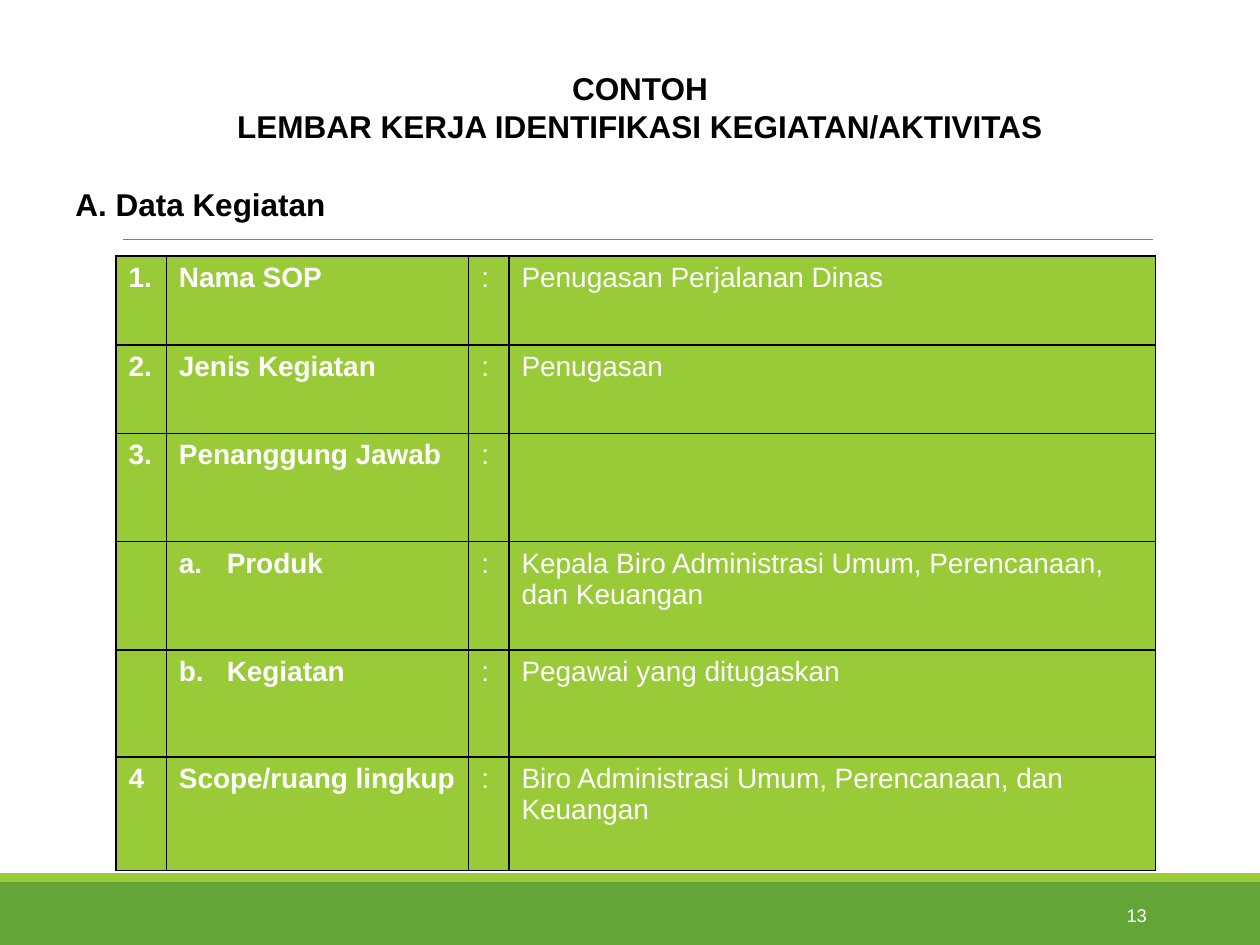
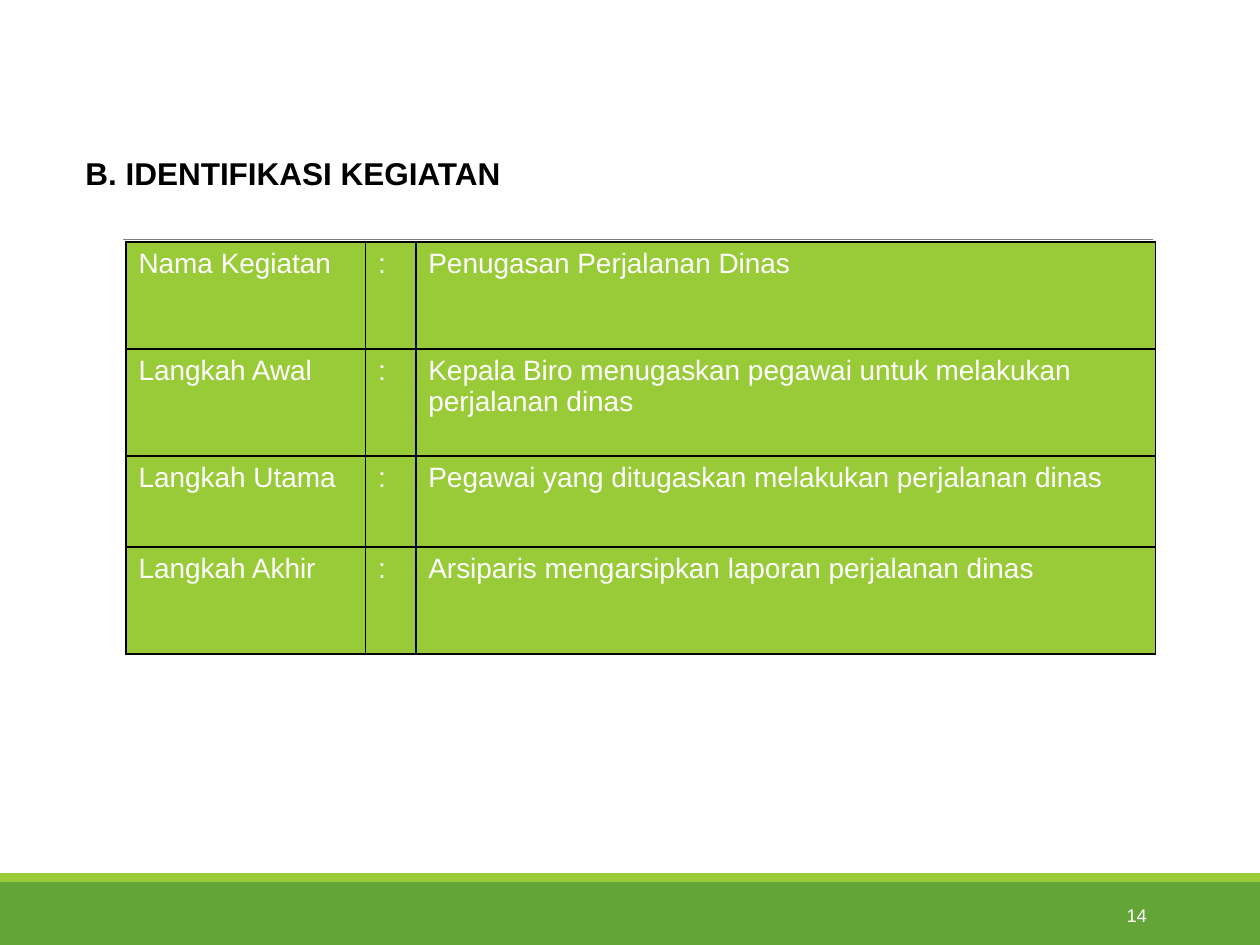
from dataclasses import dataclass

from lxml import etree
from pptx import Presentation
from pptx.dml.color import RGBColor
from pptx.enum import shapes, text
from pptx.oxml import ns
from pptx.util import Inches, Pt

GREEN = RGBColor(0x63, 0xA5, 0x37)
LIME = RGBColor(0x99, 0xCB, 0x38)
GRAY = RGBColor(0x80, 0x80, 0x80)
BLACK = RGBColor(0, 0, 0)
WHITE = RGBColor(0xFF, 0xFF, 0xFF)
FONT = "Arial"
LEFT, CENTER, RIGHT = text.PP_ALIGN.LEFT, text.PP_ALIGN.CENTER, text.PP_ALIGN.RIGHT


@dataclass(frozen=True)
class Band:
    top: float
    height: float
    color: RGBColor


@dataclass(frozen=True)
class Label:
    words: str
    left: float
    top: float
    width: float
    height: float = 0.4
    size: float = 18
    color: RGBColor = BLACK
    bold: bool = True
    align: text.PP_ALIGN = LEFT
    wrap: bool = False


@dataclass(frozen=True)
class Grid:
    left: float
    top: float
    columns: tuple[float, ...]
    heights: tuple[float, ...]
    rows: tuple[tuple[str, ...], ...]
    bold_columns: int = 0
    lettered_rows: tuple[int, ...] = ()


@dataclass(frozen=True)
class Page:
    number: int
    labels: tuple[Label, ...]
    grid: Grid


BANDS = (Band(7, 0.5, GREEN), Band(6.93, 0.07, LIME))

PAGES = (
    Page(
        13,
        (
            Label("CONTOH\nLEMBAR KERJA IDENTIFIKASI KEGIATAN/AKTIVITAS",
                  1.75, 0.5, 6.66, 0.7, align=CENTER),
            Label("A. Data Kegiatan", 0.5, 1.42, 2.83, wrap=True),
        ),
        Grid(
            0.92, 2.03, (0.4, 2.4, 0.32, 5.13), (0.71, 0.7, 0.86, 0.86, 0.85, 0.9),
            (
                ("1.", "Nama SOP", ":", "Penugasan Perjalanan Dinas"),
                ("2.", "Jenis Kegiatan", ":", "Penugasan"),
                ("3.", "Penanggung Jawab", ":", ""),
                ("", "Produk", ":", "Kepala Biro Administrasi Umum, Perencanaan, dan Keuangan"),
                ("", "Kegiatan", ":", "Pegawai yang ditugaskan"),
                ("4", "Scope/ruang lingkup", ":",
                 "Biro Administrasi Umum, Perencanaan, dan Keuangan"),
            ),
            bold_columns=2,
            lettered_rows=(3, 4),
        ),
    ),
    Page(
        14,
        (Label("B. IDENTIFIKASI KEGIATAN", 0.58, 1.17, 3.53),),
        Grid(
            1, 1.92, (1.9, 0.4, 5.87), (0.85, 0.85, 0.72, 0.85),
            (
                ("Nama Kegiatan", ":", "Penugasan Perjalanan Dinas"),
                ("Langkah Awal", ":",
                 "Kepala Biro menugaskan pegawai untuk melakukan perjalanan dinas"),
                ("Langkah Utama", ":", "Pegawai yang ditugaskan melakukan perjalanan dinas"),
                ("Langkah Akhir", ":", "Arsiparis mengarsipkan laporan perjalanan dinas"),
            ),
        ),
    ),
)


def style_text(frame, size: float, color: RGBColor, bold: bool, align=LEFT) -> None:
    for para in frame.paragraphs:
        para.alignment = align
        for span in para.runs:
            span.font.name = FONT
            span.font.size = Pt(size)
            span.font.bold = bold
            span.font.color.rgb = color


def add_label(slide, label: Label) -> None:
    box = slide.shapes.add_textbox(
        Inches(label.left), Inches(label.top), Inches(label.width), Inches(label.height))
    frame = box.text_frame
    frame.text = label.words
    frame.word_wrap = label.wrap
    frame.vertical_anchor = text.MSO_ANCHOR.MIDDLE
    style_text(frame, label.size, label.color, label.bold, label.align)


def add_band(slide, band: Band) -> None:
    bar = slide.shapes.add_shape(
        shapes.MSO_SHAPE.RECTANGLE, 0, Inches(band.top), Inches(10), Inches(band.height))
    bar.shadow.inherit = False
    bar.fill.solid()
    bar.fill.fore_color.rgb = band.color
    bar.line.fill.background()


def add_rule(slide) -> None:
    rule = slide.shapes.add_connector(
        shapes.MSO_CONNECTOR.STRAIGHT, Inches(0.98), Inches(1.9), Inches(9.15), Inches(1.9))
    rule.line.color.rgb = GRAY
    rule.line.width = Pt(0.5)
    etree.SubElement(rule._element.spPr, ns.qn("a:effectLst"))


def add_borders(cell) -> None:
    properties = cell._tc.get_or_add_tcPr()
    for index, side in enumerate(("lnL", "lnR", "lnT", "lnB")):
        border = etree.Element(ns.qn(f"a:{side}"), w=str(Pt(1)))
        fill = etree.SubElement(border, ns.qn("a:solidFill"))
        etree.SubElement(fill, ns.qn("a:srgbClr"), val=str(BLACK))
        properties.insert(index, border)


def add_letter(para, position: int) -> None:
    properties = para._p.get_or_add_pPr()
    properties.set("marL", str(Inches(0.38)))
    properties.set("indent", str(-Inches(0.38)))
    etree.SubElement(properties, ns.qn("a:buFont"), typeface=FONT)
    etree.SubElement(properties, ns.qn("a:buAutoNum"),
                     type="alphaLcPeriod", startAt=str(position))


def add_grid(slide, grid: Grid) -> None:
    table = slide.shapes.add_table(
        len(grid.rows), len(grid.columns), Inches(grid.left), Inches(grid.top),
        Inches(sum(grid.columns)), Inches(sum(grid.heights))).table
    table.first_row = table.horz_banding = False
    for column, width in zip(table.columns, grid.columns):
        column.width = Inches(width)
    for row, height in zip(table.rows, grid.heights):
        row.height = Inches(height)
    for row_index, row in enumerate(grid.rows):
        for column_index, words in enumerate(row):
            cell = table.cell(row_index, column_index)
            cell.fill.solid()
            cell.fill.fore_color.rgb = LIME
            add_borders(cell)
            cell.text_frame.text = words
            style_text(cell.text_frame, 16, WHITE, column_index < grid.bold_columns)
    for position, row_index in enumerate(grid.lettered_rows, start=1):
        add_letter(table.cell(row_index, 1).text_frame.paragraphs[0], position)


def add_page(deck, page: Page) -> None:
    slide = deck.slides.add_slide(deck.slide_layouts[6])
    for band in BANDS:
        add_band(slide, band)
    add_rule(slide)
    add_grid(slide, page.grid)
    number = Label(str(page.number), 8.12, 7.06, 1.08, size=10.5, color=WHITE,
                   bold=False, align=RIGHT, wrap=True)
    for label in (*page.labels, number):
        add_label(slide, label)


def main() -> None:
    deck = Presentation()
    deck.slide_width, deck.slide_height = Inches(10), Inches(7.5)
    for page in PAGES:
        add_page(deck, page)
    deck.save("out.pptx")


if __name__ == "__main__":
    main()
